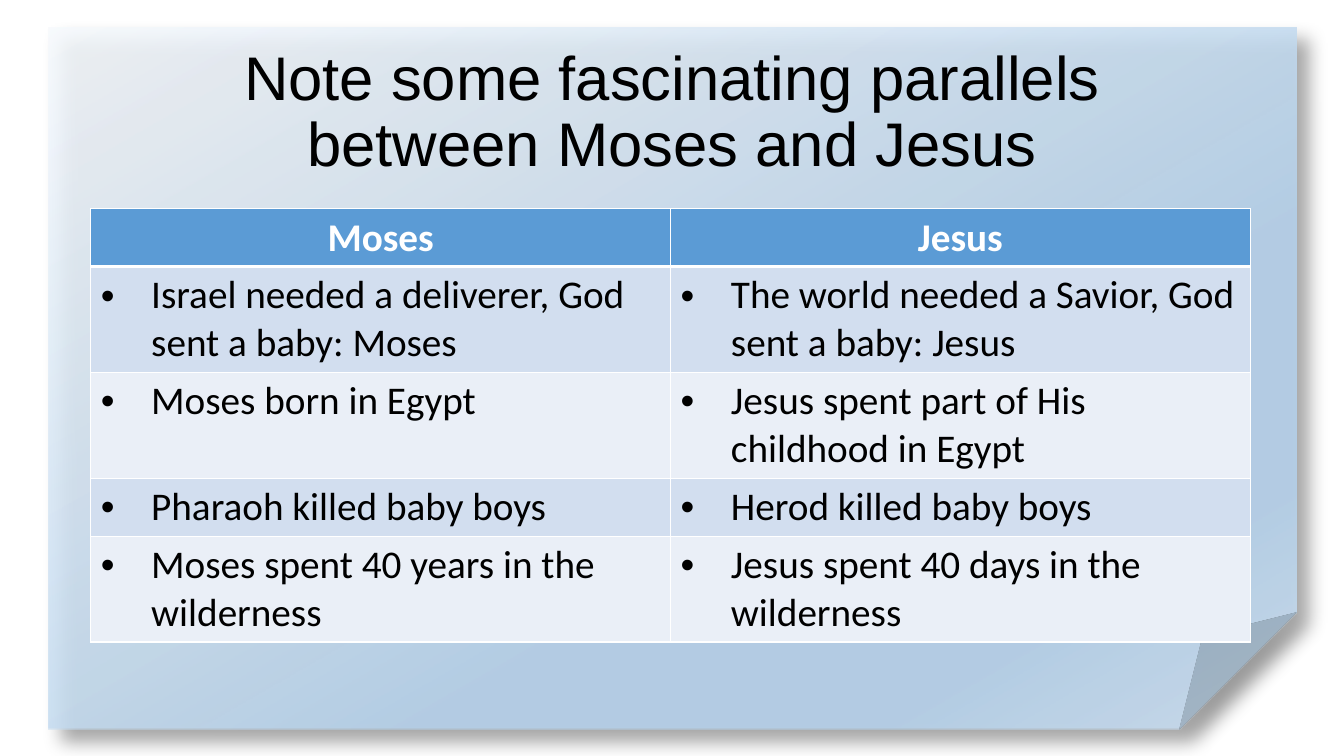
from lxml import etree
from pptx import Presentation
from pptx import util as u
from pptx.dml.color import RGBColor
from pptx.enum import shapes, text
from pptx.oxml.ns import qn

TITLE = "Note some fascinating parallels\nbetween Moses and Jesus"
HEADINGS = ("Moses", "Jesus")
PARALLELS = [
    ("Israel needed a deliverer, God sent a baby: Moses",
     "The world needed a Savior, God sent a baby: Jesus"),
    ("Moses born in Egypt", "Jesus spent part of His childhood in Egypt"),
    ("Pharaoh killed baby boys", "Herod killed baby boys"),
    ("Moses spent 40 years in the wilderness",
     "Jesus spent 40 days in the wilderness"),
]
ROW_LINES = (1, 2, 2, 1, 2)

BLACK = RGBColor(0x00, 0x00, 0x00)
WHITE = RGBColor(0xFF, 0xFF, 0xFF)
HEADER_BLUE = RGBColor(0x5B, 0x9B, 0xD5)
BANDS = (RGBColor(0xD2, 0xDE, 0xEF), RGBColor(0xEA, 0xEF, 0xF7))
# Position and opacity in percent
PAPER_STOPS = [
    (0, RGBColor(0xF7, 0xFA, 0xFD), 86),
    (64, RGBColor(0xB5, 0xD2, 0xEC), 87),
    (83, RGBColor(0xB5, 0xD2, 0xEC), 87),
    (100, RGBColor(0xCE, 0xE1, 0xF2), 87),
]

COLUMN_WIDTH = 5.75
LINE_HEIGHT = 0.475
CELL_PADDING = 0.1


def add_element(parent, tag, **attributes):
    values = {name: str(value) for name, value in attributes.items()}
    return etree.SubElement(parent, qn(tag), values)


def add_color(parent, color, opacity=100):
    element = add_element(parent, "a:srgbClr", val=color)
    if opacity < 100:
        add_element(element, "a:alpha", val=opacity * 1000)


def write_text(frame, content, size, font, color, bold=False, centred=False,
               spacing=None, bullet=False):
    paragraph = frame.paragraphs[0]
    paragraph.text = content
    if centred:
        paragraph.alignment = text.PP_ALIGN.CENTER
    if spacing:
        paragraph.line_spacing = spacing
    if bullet:
        properties = paragraph._p.get_or_add_pPr()
        properties.set("marL", str(u.Inches(0.5)))
        properties.set("indent", str(-u.Inches(0.5)))
        add_element(properties, "a:buFont", typeface="Arial")
        add_element(properties, "a:buChar", char="•")
    for run in paragraph.runs:
        run.font.size = u.Pt(size)
        run.font.name = font
        run.font.bold = bold
        run.font.color.rgb = color


def add_paper(slide):
    """Add the translucent folded sheet with its gradient and shadow."""
    paper = slide.shapes.add_shape(
        shapes.MSO_SHAPE.FOLDED_CORNER,
        u.Inches(0.48), u.Inches(0.27), u.Inches(12.38), u.Inches(6.97))
    paper.line.fill.background()
    paper.shadow.inherit = False
    paper.fill.gradient()
    gradient = paper._element.spPr.find(qn("a:gradFill"))
    for child in list(gradient):
        gradient.remove(child)
    stops = add_element(gradient, "a:gsLst")
    for position, color, opacity in PAPER_STOPS:
        stop = add_element(stops, "a:gs", pos=position * 1000)
        add_color(stop, color, opacity)
    add_element(gradient, "a:lin", ang=60 * 60000, scaled=0)
    effects = paper._element.spPr.find(qn("a:effectLst"))
    shadow = add_element(effects, "a:outerShdw", blurRad=u.Pt(13), dist=u.Pt(13),
                         dir=45 * 60000, algn="tl", rotWithShape=0)
    add_color(shadow, BLACK, 40)


def add_title(slide):
    box = slide.shapes.add_textbox(
        u.Inches(0.92), u.Inches(0.4), u.Inches(11.5), u.Inches(1.45))
    box.text_frame.word_wrap = True
    box.text_frame.vertical_anchor = text.MSO_ANCHOR.MIDDLE
    write_text(box.text_frame, TITLE, 44, "Arial", BLACK, centred=True, spacing=0.9)


def set_borders(cell, top=1, bottom=1):
    properties = cell._tc.get_or_add_tcPr()
    for side, width in (("L", 1), ("R", 1), ("T", top), ("B", bottom)):
        border = add_element(properties, f"a:ln{side}", w=u.Pt(width))
        add_color(add_element(border, "a:solidFill"), WHITE)


def add_comparison(slide):
    heights = [lines * LINE_HEIGHT + CELL_PADDING for lines in ROW_LINES]
    frame = slide.shapes.add_table(
        len(heights), len(HEADINGS), u.Inches(0.9), u.Inches(2.07),
        u.Inches(COLUMN_WIDTH * len(HEADINGS)), u.Inches(sum(heights)))
    table = frame.table
    for column in table.columns:
        column.width = u.Inches(COLUMN_WIDTH)
    for row, height in zip(table.rows, heights):
        row.height = u.Inches(height)
    for row_index, entries in enumerate([HEADINGS, *PARALLELS]):
        header = row_index == 0
        for column_index, entry in enumerate(entries):
            cell = table.cell(row_index, column_index)
            set_borders(cell, top=3 if row_index == 1 else 1,
                        bottom=3 if header else 1)
            cell.fill.solid()
            cell.fill.fore_color.rgb = HEADER_BLUE if header else BANDS[(row_index - 1) % 2]
            write_text(cell.text_frame, entry, 28, "Calibri",
                       WHITE if header else BLACK, bold=header,
                       centred=header, bullet=not header)


def main():
    presentation = Presentation()
    presentation.slide_width = u.Inches(13.33)
    presentation.slide_height = u.Inches(7.5)
    slide = presentation.slides.add_slide(presentation.slide_layouts[6])
    add_paper(slide)
    add_title(slide)
    add_comparison(slide)
    presentation.save("out.pptx")


if __name__ == "__main__":
    main()
